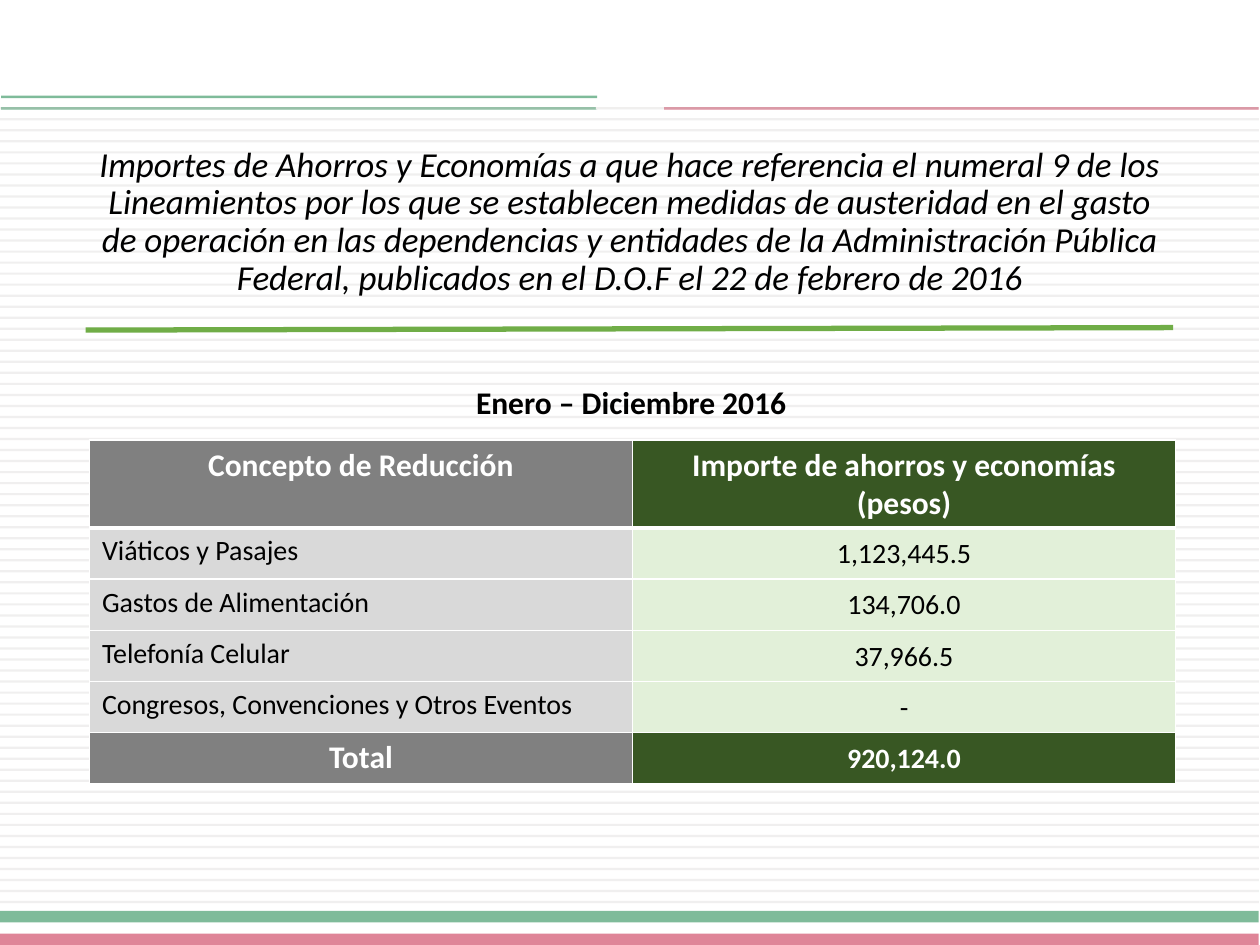
from pptx import Presentation
from pptx.dml.color import RGBColor
from pptx.enum.shapes import MSO_CONNECTOR, MSO_SHAPE
from pptx.enum.text import MSO_ANCHOR, PP_ALIGN
from pptx.oxml import parse_xml
from pptx.oxml.ns import nsdecls, qn
from pptx.oxml.xmlchemy import OxmlElement
from pptx.util import Inches, Pt

THEME = {
    "font": "Calibri",
    "title": 20, "heading": 18, "body": 16,
    "black": "000000", "white": "FFFFFF",
    "green": "007837", "red": "C00D32", "gap": "FEFEFE",
    "stripe": "D0CDCB", "rule": "70AD47",
    "dark_gray": "808080", "dark_green": "385723",
    "light_gray": "D9D9D9", "light_green": "E2F0D9",
}

TITLE = (
    "Importes de Ahorros y Economías a que hace referencia el numeral 9 de los "
    "Lineamientos por los que se establecen medidas de austeridad en el gasto de "
    "operación en las dependencias y entidades de la Administración Pública Federal, "
    "publicados en el D.O.F el 22 de febrero de 2016"
)
PERIOD = "Enero – Diciembre 2016"
ROWS = [
    ("Concepto de Reducción", "Importe de ahorros y economías (pesos)"),
    ("Viáticos y Pasajes", "1,123,445.5"),
    ("Gastos de Alimentación", "134,706.0"),
    ("Telefonía Celular", "37,966.5"),
    ("Congresos, Convenciones y Otros Eventos", "-"),
    ("Total", "920,124.0"),
]

WIDTH, HEIGHT = 10, 7.5
BAND_WIDTH = 9.99
# left, top, width, height, colour, opacity in percent
BANDS = [
    (0.01, 0.76, 4.73, 0.02, "green", 50),
    (0, 7.41, BAND_WIDTH, 0.09, "red", 50),
    (0, 7.23, BAND_WIDTH, 0.09, "green", 50),
    (0.01, 0.85, 4.73, 0.02, "green", 50),
    (4.73, 0.85, 0.53, 0.02, "gap", 100),
    (5.27, 0.85, 4.72, 0.02, "red", 50),
]
STRIPE_TOP, STRIPE_BOTTOM, STRIPE_COUNT = 0.86, 7.16, 73
TABLE = (0.71, 3.49, 8.62, 2.73)
HEADER_HEIGHT = 0.7


def color(name):
    return RGBColor.from_string(THEME[name])


def inches(*lengths):
    return [Inches(length) for length in lengths]


def set_opacity(shape, percent):
    for value in shape.element.spPr.iter(qn("a:srgbClr")):
        alpha = OxmlElement("a:alpha")
        alpha.set("val", str(percent * 1000))
        value.append(alpha)


def write(frame, text, size, ink="black", bold=False, italic=False, align=PP_ALIGN.CENTER):
    frame.word_wrap = True
    frame.text = text
    para = frame.paragraphs[0]
    para.alignment = align
    font = para.runs[0].font
    font.name, font.size = THEME["font"], Pt(THEME[size])
    font.bold, font.italic = bold, italic
    font.color.rgb = color(ink)
    return para


def add_bands(page):
    for *place, name, opacity in BANDS:
        band = page.shapes.add_shape(MSO_SHAPE.RECTANGLE, *inches(*place))
        band.shadow.inherit = False
        band.fill.solid()
        band.fill.fore_color.rgb = color(name)
        band.line.fill.background()
        if opacity < 100:
            set_opacity(band, opacity)


def add_stripes(page):
    step = (STRIPE_BOTTOM - STRIPE_TOP) / (STRIPE_COUNT - 1)
    builder = page.shapes.build_freeform(*inches(0, STRIPE_TOP))
    for index in range(STRIPE_COUNT):
        top = STRIPE_TOP + index * step
        if index:
            builder.move_to(*inches(0, top))
        builder.add_line_segments([inches(BAND_WIDTH, top)], close=False)
    stripes = builder.convert_to_shape()
    stripes.shadow.inherit = False
    stripes.fill.background()
    stripes.line.color.rgb = color("stripe")
    stripes.line.width = Pt(1.25)
    set_opacity(stripes, 30)


def add_rule(page):
    rule = page.shapes.add_connector(MSO_CONNECTOR.STRAIGHT, *inches(0.68, 2.62, 9.31, 2.6))
    rule.line.color.rgb = color("rule")
    rule.line.width = Pt(3)
    rule.element.spPr.append(OxmlElement("a:effectLst"))


def set_borders(cell, top, bottom):
    widths = {"lnL": 1, "lnR": 1, "lnT": top, "lnB": bottom}
    properties = cell._tc.get_or_add_tcPr()
    for index, (side, width) in enumerate(widths.items()):
        properties.insert(index, parse_xml(
            f'<a:{side} {nsdecls("a")} w="{Pt(width)}"><a:solidFill>'
            f'<a:srgbClr val="{THEME["white"]}"/></a:solidFill></a:{side}>'))


def add_savings_table(page):
    table = page.shapes.add_table(len(ROWS), 2, *inches(*TABLE)).table
    table.first_row = table.horz_banding = False
    last = len(ROWS) - 1
    row_height = (TABLE[3] - HEADER_HEIGHT) / last
    for i, texts in enumerate(ROWS):
        table.rows[i].height = Inches(row_height if i else HEADER_HEIGHT)
        strong = i in (0, last)
        for j, text in enumerate(texts):
            cell = table.cell(i, j)
            is_amount = j == 1 and i > 0
            write(cell.text_frame, text,
                  size="heading" if strong and not is_amount else "body",
                  ink="white" if strong else "black", bold=strong,
                  align=PP_ALIGN.CENTER if strong or is_amount else PP_ALIGN.LEFT)
            if is_amount:
                cell.vertical_anchor = MSO_ANCHOR.MIDDLE
                cell.margin_left = cell.margin_top = cell.margin_right = Inches(0.01)
                cell.margin_bottom = 0
            cell.fill.solid()
            shade = "dark" if strong else "light"
            cell.fill.fore_color.rgb = color(f"{shade}_{('gray', 'green')[j]}")
            set_borders(cell, top=3 if i == 1 else 1, bottom=1 if i else 3)


def main():
    deck = Presentation()
    deck.slide_width, deck.slide_height = inches(WIDTH, HEIGHT)
    page = deck.slides.add_slide(deck.slide_layouts[6])
    add_bands(page)
    add_stripes(page)

    title = page.shapes.add_textbox(*inches(0.69, 1.07, 8.62, 1.39)).text_frame
    title.vertical_anchor = MSO_ANCHOR.MIDDLE
    write(title, TITLE, "title", italic=True).line_spacing = 0.9

    add_savings_table(page)
    add_rule(page)
    period = page.shapes.add_textbox(*inches(0.71, 2.99, 8.6, 0.4))
    write(period.text_frame, PERIOD, "heading", bold=True)
    deck.save("out.pptx")


if __name__ == "__main__":
    main()
